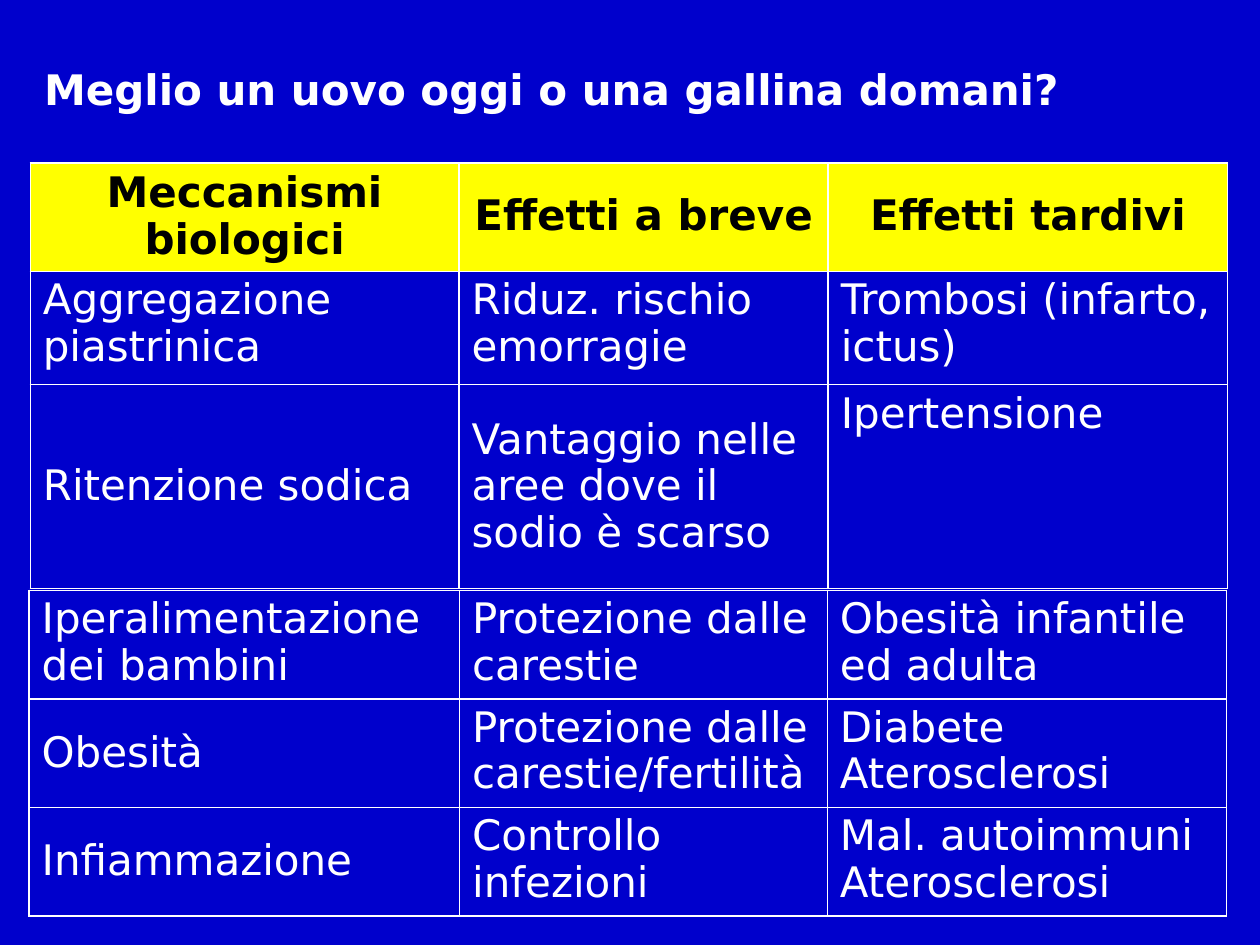
from dataclasses import dataclass

from lxml import etree
from pptx import Presentation
from pptx.dml.color import RGBColor
from pptx.enum.text import MSO_ANCHOR, MSO_AUTO_SIZE, PP_ALIGN
from pptx.oxml.ns import qn
from pptx.util import Pt

TOP, MID = MSO_ANCHOR.TOP, MSO_ANCHOR.MIDDLE
LEFT, CENTER = PP_ALIGN.LEFT, PP_ALIGN.CENTER
NO_FIT = MSO_AUTO_SIZE.NONE
FONT, SIZE = "DejaVu Sans", 24
BLUE, YELLOW, WHITE, BLACK = "0000CC", "FFFF00", "FFFFFF", "000000"


@dataclass
class Row:
    """One table row: height, texts and the anchor of each cell."""
    height: float
    texts: tuple
    anchors: tuple = (TOP, TOP, TOP)
    head: bool = False


@dataclass
class Grid:
    """One table: place, column widths and rows."""
    left: float
    top: float
    widths: tuple
    rows: tuple


GRIDS = (
    Grid(17.3, 93, (245, 211, 228.2), (
        Row(62, ("Meccanismi biologici", "Effetti a breve", "Effetti tardivi"),
            (MID, MID, MID), True),
        Row(64.8, ("Aggregazione piastrinica", "Riduz. rischio emorragie",
                   "Trombosi (infarto, ictus)")),
        Row(116.6, ("Ritenzione sodica", "Vantaggio nelle aree dove il sodio è scarso",
                    "Ipertensione"), (MID, MID, TOP)),
    )),
    Grid(16.6, 337.4, (246, 210.2, 228.2), (
        Row(62, ("Iperalimentazione dei bambini", "Protezione dalle carestie",
                 "Obesità infantile ed adulta")),
        Row(62, ("Obesità", "Protezione dalle carestie/fertilità",
                 "Diabete Aterosclerosi"), (MID, TOP, TOP)),
        Row(62, ("Infiammazione", "Controllo infezioni",
                 "Mal. autoimmuni Aterosclerosi"), (MID, TOP, TOP)),
    )),
)


def paint(color, value: str) -> None:
    """Set a colour from a hex string."""
    color.rgb = RGBColor.from_string(value)


def write(frame, text: str, color: str, bold: bool, align) -> None:
    """Put styled text in a frame."""
    frame.text = text
    para = frame.paragraphs[0]
    para.alignment = align
    font = para.runs[0].font
    font.name, font.size, font.bold = FONT, Pt(SIZE), bold
    paint(font.color, color)


def edge(cell) -> None:
    """Draw white lines on all four sides of a cell."""
    props = cell._tc.get_or_add_tcPr()
    for side in ("lnL", "lnR", "lnT", "lnB"):
        line = etree.SubElement(props, qn(f"a:{side}"), w=str(Pt(1)))
        fill = etree.SubElement(line, qn("a:solidFill"))
        etree.SubElement(fill, qn("a:srgbClr"), val=WHITE)


def draw_cell(cell, text: str, anchor, head: bool) -> None:
    """Fill one cell."""
    edge(cell)
    cell.vertical_anchor = anchor
    if head:
        cell.fill.solid()
        paint(cell.fill.fore_color, YELLOW)
    else:
        cell.fill.background()
    write(cell.text_frame, text, BLACK if head else WHITE, head,
          CENTER if head else LEFT)
    cell.text_frame.paragraphs[0].line_spacing = 0.95


def draw_grid(slide, grid: Grid) -> None:
    """Draw one table."""
    table = slide.shapes.add_table(
        len(grid.rows), len(grid.widths), Pt(grid.left), Pt(grid.top),
        Pt(sum(grid.widths)), Pt(sum(row.height for row in grid.rows))).table
    table.first_row = table.horz_banding = False
    for col, width in zip(table.columns, grid.widths):
        col.width = Pt(width)
    for line, row in zip(table.rows, grid.rows):
        line.height = Pt(row.height)
        for cell, text, anchor in zip(line.cells, row.texts, row.anchors):
            draw_cell(cell, text, anchor, row.head)


def draw_title(slide, text: str) -> None:
    """Place the slide title."""
    title = slide.shapes.title
    title.left, title.top = Pt(18), Pt(32.4)
    title.width, title.height = Pt(596), Pt(36.7)
    frame = title.text_frame
    frame.word_wrap, frame.auto_size = False, NO_FIT
    frame.vertical_anchor = TOP
    write(frame, text, WHITE, True, LEFT)


def main() -> None:
    """Build the slide."""
    deck = Presentation()
    deck.slide_width, deck.slide_height = Pt(720), Pt(540)
    slide = deck.slides.add_slide(deck.slide_layouts[5])
    back = slide.background.fill
    back.solid()
    paint(back.fore_color, BLUE)
    draw_title(slide, "Meglio un uovo oggi o una gallina domani?")
    for grid in GRIDS:
        draw_grid(slide, grid)
    deck.save("out.pptx")


if __name__ == "__main__":
    main()
